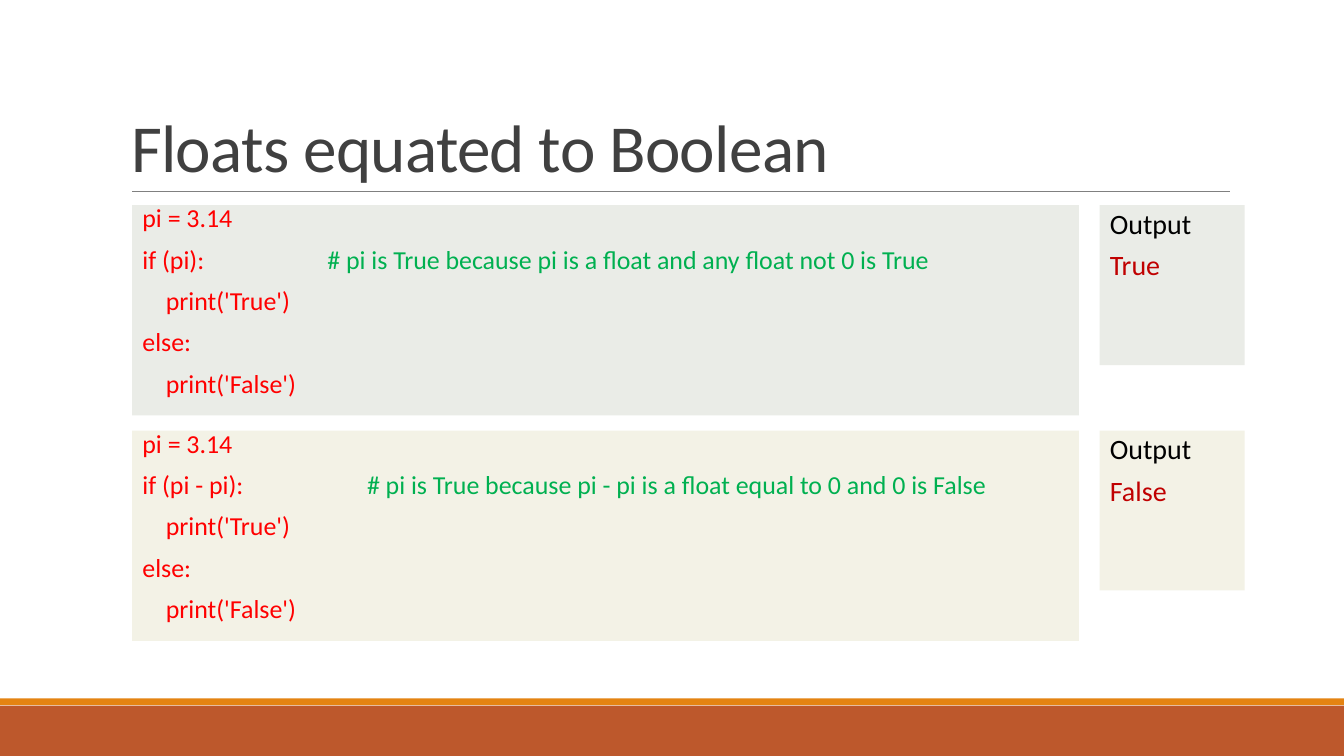
from lxml import etree
from pptx import Presentation
from pptx.dml.color import RGBColor
from pptx.enum import shapes, text
from pptx.oxml import ns
from pptx.util import Cm, Pt

TITLE = "Floats equated to Boolean"
EXAMPLES = [
    {
        "condition": "if (pi):",
        "comment": "# pi is True because pi is a float and any float not 0 is True",
        "comment_at": 4.66,
        "output": "True",
        "fill": "EAECE7",
    },
    {
        "condition": "if (pi - pi):",
        "comment": "# pi is True because pi - pi is a float equal to 0 and 0 is False",
        "comment_at": 5.66,
        "output": "False",
        "fill": "F3F2E6",
    },
]

THEME = {
    "font": "Calibri",
    "title": "404040", "code": "FF0000", "comment": "00B050",
    "label": "000000", "result": "C00000",
    "rule": "808080", "band": "BD582C", "stripe": "E48312",
    "title_size": 48, "code_size": 18.5, "output_size": 20,
}

SLIDE_WIDTH, SLIDE_HEIGHT = 33.87, 19.05
BAND_HEIGHT, STRIPE_HEIGHT, STRIPE_TOP = 1.27, 0.17, 17.6
LEFT, RULE_RIGHT, RULE_TOP = 3.33, 31, 4.83
PANEL_TOP, PANEL_PITCH = 5.17, 5.68
CODE_WIDTH, CODE_HEIGHT = 23.86, 5.3
OUTPUT_LEFT, OUTPUT_WIDTH, OUTPUT_HEIGHT = 27.71, 3.66, 4.03
INSET_X, INSET_Y = 0.26, 0.13
CODE_INDENT = 0.59


def add_panel(slide, left, top, width, height, fill):
    panel = slide.shapes.add_shape(
        shapes.MSO_SHAPE.RECTANGLE, Cm(left), Cm(top), Cm(width), Cm(height))
    panel.shadow.inherit = False
    panel.fill.solid()
    panel.fill.fore_color.rgb = RGBColor.from_string(fill)
    panel.line.fill.background()
    frame = panel.text_frame
    frame.word_wrap = True
    frame.vertical_anchor = text.MSO_ANCHOR.TOP
    frame.margin_left, frame.margin_right = Cm(INSET_X), 0
    frame.margin_top = frame.margin_bottom = Cm(INSET_Y)
    return panel


def write(paragraph, runs, *, size, line_spacing, before=0, after=0,
          indent=0, tab=None, tracking=None):
    """Fill a paragraph with (text, colour) runs; indent and tab are in cm."""
    paragraph.alignment = text.PP_ALIGN.LEFT
    paragraph.line_spacing = line_spacing
    paragraph.space_before, paragraph.space_after = Pt(before), Pt(after)
    properties = paragraph._p.get_or_add_pPr()
    if indent:
        properties.set("marL", str(Cm(indent)))
    if tab is not None:
        stops = etree.SubElement(properties, ns.qn("a:tabLst"))
        etree.SubElement(stops, ns.qn("a:tab"), pos=str(Cm(tab)), algn="l")
    for words, colour in runs:
        run = paragraph.add_run()
        run.text = words
        run.font.name = THEME["font"]
        run.font.size = Pt(size)
        run.font.color.rgb = RGBColor.from_string(colour)
        if tracking is not None:
            run._r.get_or_add_rPr().set("spc", str(round(tracking * 100)))


def write_lines(panel, lines, **paragraph_format):
    """Write (runs, extra format) pairs, one paragraph each."""
    frame = panel.text_frame
    for number, (runs, extra) in enumerate(lines):
        paragraph = frame.add_paragraph() if number else frame.paragraphs[0]
        write(paragraph, runs, **paragraph_format, **extra)


def add_example(slide, example, top):
    code, comment = THEME["code"], THEME["comment"]
    condition = [(example["condition"] + "\t", code), (example["comment"], comment)]
    code_panel = add_panel(slide, LEFT, top, CODE_WIDTH, CODE_HEIGHT, example["fill"])
    write_lines(code_panel, [
        ([("pi = 3.14", code)], {}),
        (condition, {"tab": example["comment_at"]}),
        ([("print('True')", code)], {"indent": CODE_INDENT}),
        ([("else:", code)], {}),
        ([("print('False')", code)], {"indent": CODE_INDENT}),
    ], size=THEME["code_size"], line_spacing=0.7, before=12, after=2)

    output_panel = add_panel(
        slide, OUTPUT_LEFT, top, OUTPUT_WIDTH, OUTPUT_HEIGHT, example["fill"])
    write_lines(output_panel, [
        ([("Output", THEME["label"])], {}),
        ([(example["output"], THEME["result"])], {}),
    ], size=THEME["output_size"], line_spacing=0.9, before=6, after=2)


def add_title(slide):
    title = slide.shapes.title
    title.left, title.top = Cm(3.05), Cm(0.79)
    title.width, title.height = Cm(27.94), Cm(4.04)
    frame = title.text_frame
    frame.vertical_anchor = text.MSO_ANCHOR.BOTTOM
    frame.auto_size = text.MSO_AUTO_SIZE.NONE
    write(frame.paragraphs[0], [(TITLE, THEME["title"])],
          size=THEME["title_size"], line_spacing=0.85, tracking=-0.5)


def add_rule(slide):
    rule = slide.shapes.add_connector(
        shapes.MSO_CONNECTOR.STRAIGHT,
        Cm(LEFT), Cm(RULE_TOP), Cm(RULE_RIGHT), Cm(RULE_TOP))
    rule.line.color.rgb = RGBColor.from_string(THEME["rule"])
    rule.line.width = Pt(0.5)
    etree.SubElement(rule._element.spPr, ns.qn("a:effectLst"))


def main():
    presentation = Presentation()
    presentation.slide_width = Cm(SLIDE_WIDTH)
    presentation.slide_height = Cm(SLIDE_HEIGHT)
    slide = presentation.slides.add_slide(presentation.slide_layouts[5])

    add_panel(slide, 0, SLIDE_HEIGHT - BAND_HEIGHT, SLIDE_WIDTH, BAND_HEIGHT, THEME["band"])
    add_panel(slide, 0, STRIPE_TOP, SLIDE_WIDTH, STRIPE_HEIGHT, THEME["stripe"])
    add_rule(slide)
    add_title(slide)
    for row, example in enumerate(EXAMPLES):
        add_example(slide, example, PANEL_TOP + row * PANEL_PITCH)

    presentation.save("out.pptx")


if __name__ == "__main__":
    main()
